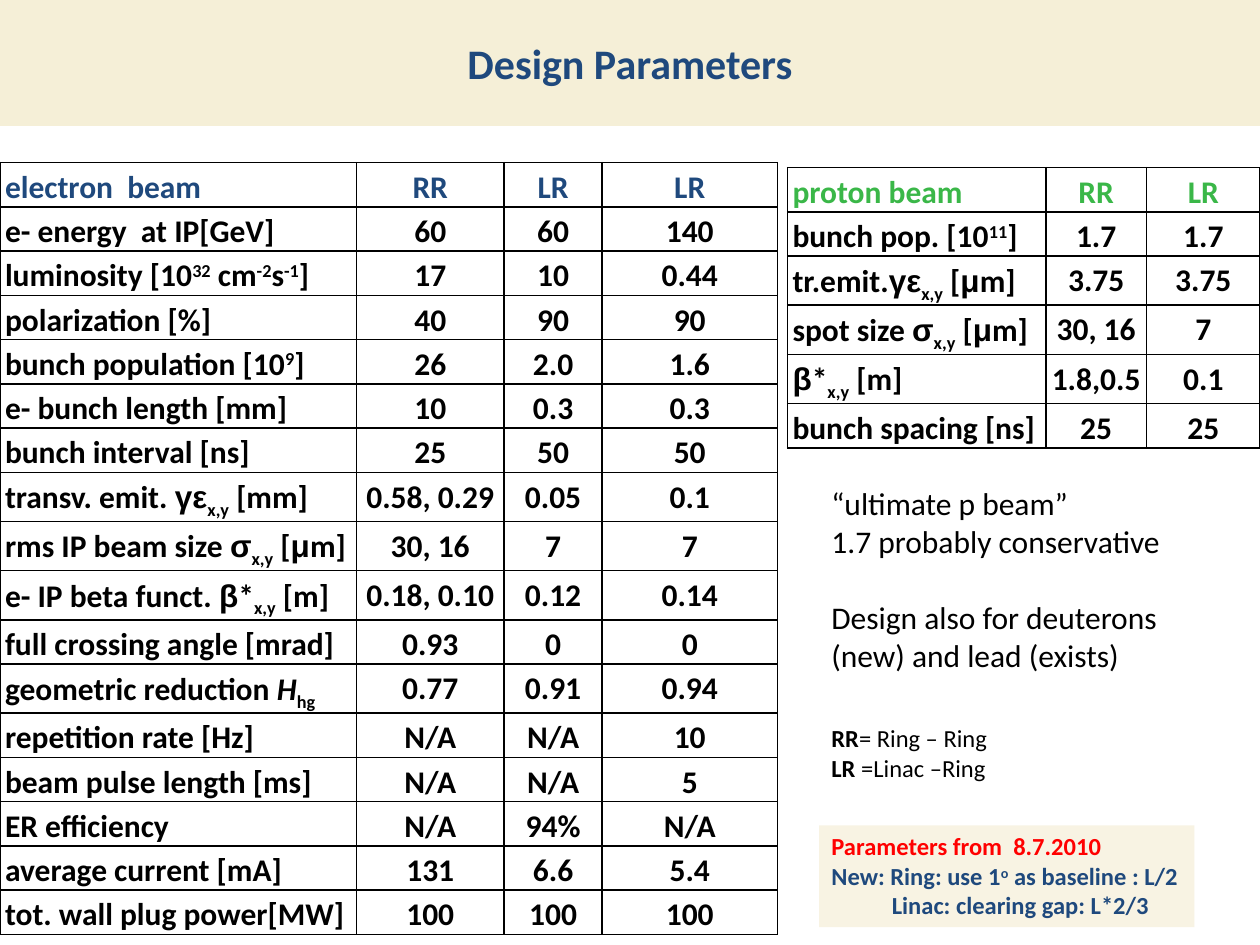
from lxml.etree import SubElement
from pptx import Presentation
from pptx.dml.color import RGBColor
from pptx.enum.shapes import MSO_SHAPE as Shape
from pptx.enum.text import MSO_ANCHOR as Anchor, MSO_AUTO_SIZE as AutoSize, PP_ALIGN as Align
from pptx.oxml.ns import qn
from pptx.util import Inches, Pt

THEME = {
    "font": "Calibri", "greek_font": "Arial",
    "title_size": 24, "body_size": 18, "note_size": 14,
    "navy": "1F497D", "green": "3AB748", "red": "FF0000", "black": "000000", "gold": "D1B039",
}
SLIDE_WIDTH, SLIDE_HEIGHT = Inches(10), Inches(7.5)
STYLES = {
    "sup": {"baseline": 30000},
    "sub": {"baseline": -25000},
    "greek": {"name": THEME["greek_font"]},
    "italic": {"italic": True},
    "bold": {"bold": True},
}

SUB_XY = ("x,y", "sub")
MICRO = (" [", ("μ", "greek"), "m]")
EMITTANCE = (("γε", "greek"), SUB_XY)
SPOT = (("σ", "greek"), SUB_XY, *MICRO)
BETA = (("β", "greek"), "*", SUB_XY, " [m]")

ELECTRON_ROWS = [
    ("electron  beam", "RR", "LR", "LR"),
    ("e- energy  at IP[GeV]", "60", "60", "140"),
    (("luminosity [10", ("32", "sup"), " cm", ("-2", "sup"), "s", ("-1", "sup"), "]"), "17", "10", "0.44"),
    ("polarization [%]", "40", "90", "90"),
    (("bunch population [10", ("9", "sup"), "]"), "26", "2.0", "1.6"),
    ("e- bunch length [mm]", "10", "0.3", "0.3"),
    ("bunch interval [ns]", "25", "50", "50"),
    (("transv. emit. ", *EMITTANCE, " [mm]"), "0.58, 0.29", "0.05", "0.1"),
    (("rms IP beam size ", *SPOT), "30, 16", "7", "7"),
    (("e- IP beta funct. ", *BETA), "0.18, 0.10", "0.12", "0.14"),
    ("full crossing angle [mrad]", "0.93", "0", "0"),
    (("geometric reduction ", ("H", "italic"), ("hg", "sub")), "0.77", "0.91", "0.94"),
    ("repetition rate [Hz]", "N/A", "N/A", "10"),
    ("beam pulse length [ms]", "N/A", "N/A", "5"),
    ("ER efficiency", "N/A", "94%", "N/A"),
    ("average current [mA]", "131", "6.6", "5.4"),
    ("tot. wall plug power[MW]", "100", "100", "100"),
]
PROTON_ROWS = [
    ("proton beam", "RR", "LR"),
    (("bunch pop. [10", ("11", "sup"), "]"), "1.7", "1.7"),
    (("tr.emit.", *EMITTANCE, *MICRO), "3.75", "3.75"),
    (("spot size ", *SPOT), "30, 16", "7"),
    (BETA, "1.8,0.5", "0.1"),
    ("bunch spacing [ns]", "25", "25"),
]
TABLES = [
    {"rows": ELECTRON_ROWS, "place": (0, 17.2), "columns": (28.3, 11.7, 7.8, 13.9), "color": "navy"},
    {"rows": PROTON_ROWS, "place": (62.5, 17.73), "columns": (20.5, 8, 9), "color": "green"},
]
ROW_SHARE = 4.67

NOTES = [
    {"place": (65, 75.87, 14.5, 7.6), "size": "note_size", "lines": [
        {"text": (("RR", "bold"), "= Ring – Ring")},
        {"text": (("LR", "bold"), " =Linac –Ring")},
    ]},
    {"place": (65, 87.33, 29.8, 10.8), "size": "note_size", "bold": True, "alpha": 14, "lines": [
        {"text": "Parameters from  8.7.2010", "color": "red"},
        {"text": ("New: Ring: use 1", ("o", "sup"), " as baseline : L/2"), "color": "navy"},
        {"text": "Linac: clearing gap: L*2/3", "color": "navy", "indent": 4.8},
    ]},
    {"place": (65, 50.53, 28.4, 21.6), "size": "body_size", "lines": [
        {"text": "“ultimate p beam”"},
        {"text": "1.7 probably conservative"},
        {"text": "Design also for deuterons", "before": 22},
        {"text": "(new) and lead (exists)"},
    ]},
]


def across(share):
    return int(SLIDE_WIDTH * share / 100)


def down(share):
    return int(SLIDE_HEIGHT * share / 100)


def place(left, top, width, height):
    return across(left), down(top), across(width), down(height)


def apply(target, values):
    for name, value in values.items():
        setattr(target, name, value)


def write(paragraph, text, size, color="black", bold=False):
    for part in (text,) if isinstance(text, str) else text:
        words, style = (part, None) if isinstance(part, str) else part
        values = {"name": THEME["font"], "size": Pt(THEME[size]), "bold": bold, **STYLES.get(style, {})}
        baseline = values.pop("baseline", None)
        run = paragraph.add_run()
        run.text = words
        apply(run.font, values)
        run.font.color.rgb = RGBColor.from_string(THEME[color])
        if baseline:
            run.font._rPr.set("baseline", str(baseline))


def add_panel(slide, box, alpha):
    panel = slide.shapes.add_shape(Shape.RECTANGLE, *box)
    panel.shadow.inherit = False
    panel.line.fill.background()
    panel.fill.solid()
    panel.fill.fore_color.rgb = RGBColor.from_string(THEME["gold"])
    color = next(panel._element.spPr.iter(qn("a:srgbClr")))
    SubElement(color, qn("a:alpha"), val=str(alpha * 1000))
    return panel


def add_title(slide):
    title = add_panel(slide, place(0, 0, 100, 13.33), 20)
    title.text_frame.vertical_anchor = Anchor.MIDDLE
    paragraph = title.text_frame.paragraphs[0]
    paragraph.alignment = Align.CENTER
    write(paragraph, "Design Parameters", "title_size", "navy", True)


def add_borders(cell):
    properties = cell._tc.get_or_add_tcPr()
    for side in ("lnL", "lnR", "lnT", "lnB"):
        line = SubElement(properties, qn(f"a:{side}"), w=str(Pt(1)))
        fill = SubElement(line, qn("a:solidFill"))
        SubElement(fill, qn("a:srgbClr"), val=THEME["black"])


def add_parameters(slide, rows, place, columns, color):
    height = down(ROW_SHARE)
    table = slide.shapes.add_table(
        len(rows), len(columns), across(place[0]), down(place[1]),
        across(sum(columns)), height * len(rows)).table
    apply(table, {"first_row": False, "horz_banding": False})
    for column, share in zip(table.columns, columns):
        column.width = across(share)
    for row_index, row in enumerate(rows):
        table.rows[row_index].height = height
        for column_index, text in enumerate(row):
            cell = table.cell(row_index, column_index)
            add_borders(cell)
            cell.fill.background()
            apply(cell, {"margin_left": Inches(0.04), "margin_right": Inches(0.04),
                         "margin_top": 0, "margin_bottom": 0})
            paragraph = cell.text_frame.paragraphs[0]
            apply(paragraph, {"line_spacing": 1.15,
                              "alignment": Align.CENTER if column_index else Align.LEFT})
            write(paragraph, text, "body_size", "black" if row_index else color, True)


def add_note(slide, note):
    box = place(*note["place"])
    shape = add_panel(slide, box, note["alpha"]) if "alpha" in note else slide.shapes.add_textbox(*box)
    frame = shape.text_frame
    apply(frame, {"word_wrap": False, "auto_size": AutoSize.SHAPE_TO_FIT_TEXT,
                  "vertical_anchor": Anchor.TOP})
    for index, line in enumerate(note["lines"]):
        paragraph = frame.add_paragraph() if index else frame.paragraphs[0]
        paragraph.alignment = Align.LEFT
        if "before" in line:
            paragraph.space_before = Pt(line["before"])
        if "indent" in line:
            paragraph._p.get_or_add_pPr().set("marL", str(across(line["indent"])))
        write(paragraph, line["text"], note["size"], line.get("color", "black"), note.get("bold", False))


def main():
    presentation = Presentation()
    apply(presentation, {"slide_width": SLIDE_WIDTH, "slide_height": SLIDE_HEIGHT})
    slide = presentation.slides.add_slide(presentation.slide_layouts[6])
    add_title(slide)
    for table in TABLES:
        add_parameters(slide, **table)
    for note in NOTES:
        add_note(slide, note)
    presentation.save("out.pptx")


if __name__ == "__main__":
    main()
